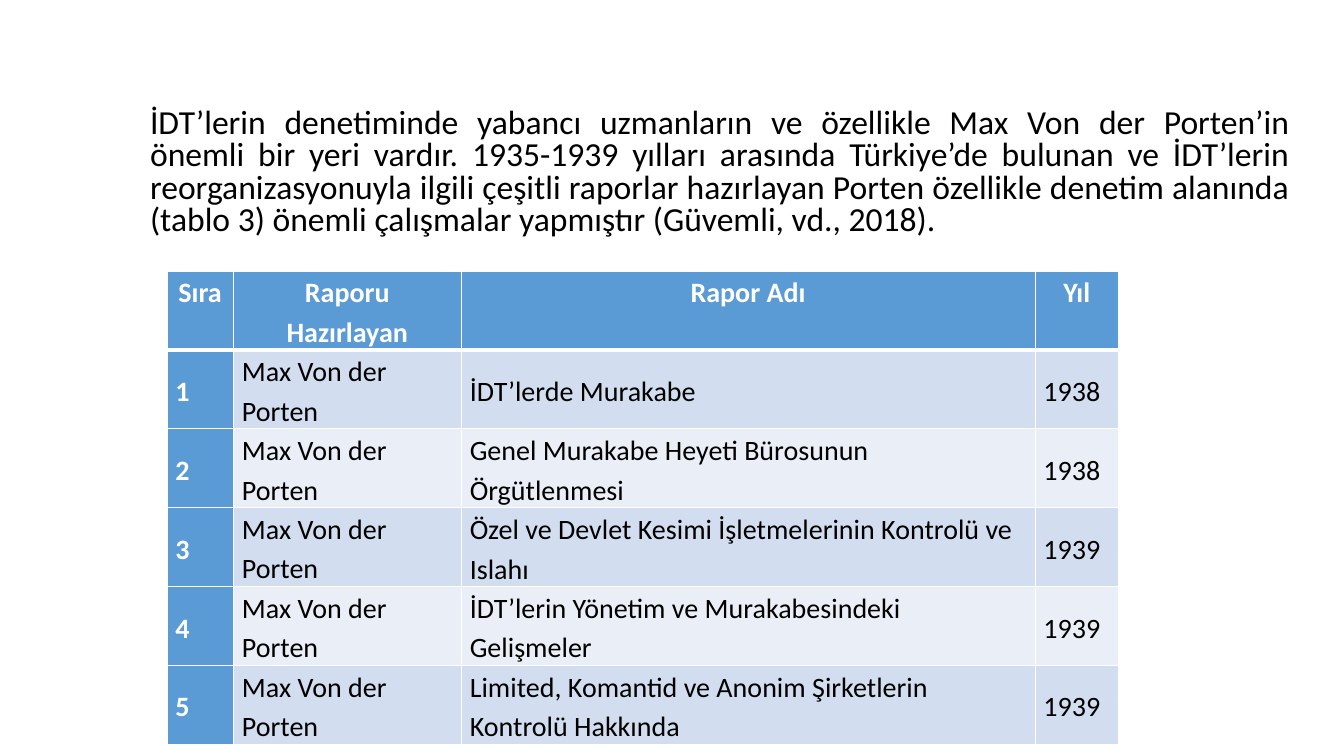
from dataclasses import dataclass

from lxml.etree import SubElement
from pptx import Presentation
from pptx.dml.color import RGBColor
from pptx.enum.text import MSO_ANCHOR, PP_ALIGN
from pptx.oxml.ns import qn
from pptx.slide import Slide
from pptx.table import _Cell
from pptx.text.text import _Paragraph
from pptx.util import Emu, Pt

EMU_PER_PX = 9144
FONT = "Calibri"
COLORS = {
    "text": "000000",
    "white": "FFFFFF",
    "header": "5B9BD5",
    "odd_row": "D2DEEF",
    "even_row": "EAEFF7",
}


@dataclass(frozen=True)
class Column:
    heading: str
    width: int
    alignment: PP_ALIGN
    anchor: MSO_ANCHOR


@dataclass(frozen=True)
class Report:
    title: str
    year: int
    height: int = 69
    author: str = "Max Von der Porten"


COLUMNS = [
    Column("Sıra", 66, PP_ALIGN.JUSTIFY, MSO_ANCHOR.MIDDLE),
    Column("Raporu Hazırlayan", 226, PP_ALIGN.LEFT, MSO_ANCHOR.TOP),
    Column("Rapor Adı", 569, PP_ALIGN.LEFT, MSO_ANCHOR.MIDDLE),
    Column("Yıl", 83, PP_ALIGN.JUSTIFY, MSO_ANCHOR.MIDDLE),
]
REPORTS = [
    Report("İDT’lerde Murakabe", 1938),
    Report("Genel Murakabe Heyeti Bürosunun Örgütlenmesi", 1938),
    Report("Özel ve Devlet Kesimi İşletmelerinin Kontrolü ve Islahı", 1939),
    Report("İDT’lerin Yönetim ve Murakabesindeki Gelişmeler", 1939),
    Report("Limited, Komantid ve Anonim Şirketlerin Kontrolü Hakkında", 1939, 74),
]
HEADER_HEIGHT = 36
INTRODUCTION = (
    "İDT’lerin denetiminde yabancı uzmanların ve özellikle Max Von der Porten’in "
    "önemli bir yeri vardır. 1935-1939 yılları arasında Türkiye’de bulunan ve "
    "İDT’lerin reorganizasyonuyla ilgili çeşitli raporlar hazırlayan Porten "
    "özellikle denetim alanında (tablo 3) önemli çalışmalar yapmıştır "
    "(Güvemli, vd., 2018)."
)


def px(length: int) -> Emu:
    return Emu(length * EMU_PER_PX)


def add_run(paragraph: _Paragraph, text: str, size: int, color: str, bold: bool = False) -> None:
    run = paragraph.add_run()
    run.text = text
    run.font.name = FONT
    run.font.size = Pt(size)
    run.font.bold = bold
    run.font.color.rgb = RGBColor.from_string(COLORS[color])


def set_borders(cell: _Cell, top: int, bottom: int) -> None:
    properties = cell._tc.get_or_add_tcPr()
    for side, width in {"L": 1, "R": 1, "T": top, "B": bottom}.items():
        line = SubElement(properties, qn(f"a:ln{side}"), w=str(Pt(width)))
        fill = SubElement(line, qn("a:solidFill"))
        SubElement(fill, qn("a:srgbClr"), val=COLORS["white"])


def fill_cell(cell: _Cell, text: str, column: Column, row: int) -> None:
    is_header = row == 0
    is_accent = is_header or column is COLUMNS[0]
    set_borders(cell, top=3 if row == 1 else 1, bottom=3 if is_header else 1)
    cell.fill.solid()
    band = "odd_row" if row % 2 else "even_row"
    cell.fill.fore_color.rgb = RGBColor.from_string(COLORS["header" if is_accent else band])
    cell.margin_left = px(8)
    cell.margin_right = px(9)
    cell.margin_top = cell.margin_bottom = 0
    cell.vertical_anchor = MSO_ANCHOR.TOP if is_header else column.anchor
    paragraph = cell.text_frame.paragraphs[0]
    paragraph.alignment = PP_ALIGN.CENTER if is_header else column.alignment
    paragraph.line_spacing = 1.15
    add_run(paragraph, text, 20, "white" if is_accent else "text", is_accent)


def add_report_table(slide: Slide) -> None:
    rows = [[column.heading for column in COLUMNS]]
    rows += [
        [str(number), report.author, report.title, str(report.year)]
        for number, report in enumerate(REPORTS, start=1)
    ]
    heights = [HEADER_HEIGHT] + [report.height for report in REPORTS]
    width = sum(column.width for column in COLUMNS)
    table = slide.shapes.add_table(
        len(rows), len(COLUMNS), px(166), px(269), px(width), px(sum(heights))
    ).table
    table.first_col = True
    for index, column in enumerate(COLUMNS):
        table.columns[index].width = px(column.width)
    for row, (texts, height) in enumerate(zip(rows, heights)):
        table.rows[row].height = px(height)
        for index, (text, column) in enumerate(zip(texts, COLUMNS)):
            fill_cell(table.cell(row, index), text, column, row)


def add_introduction(slide: Slide) -> None:
    text_frame = slide.shapes.add_textbox(px(139), px(103), px(1150), px(152)).text_frame
    text_frame.word_wrap = True
    paragraph = text_frame.paragraphs[0]
    paragraph.alignment = PP_ALIGN.JUSTIFY
    paragraph.line_spacing = 0.8
    paragraph.space_before = Pt(10)
    add_run(paragraph, INTRODUCTION, 24, "text")


def main() -> None:
    presentation = Presentation()
    presentation.slide_width = px(1333)
    presentation.slide_height = px(750)
    slide = presentation.slides.add_slide(presentation.slide_layouts.get_by_name("Blank"))
    add_report_table(slide)
    add_introduction(slide)
    presentation.save("out.pptx")


if __name__ == "__main__":
    main()
